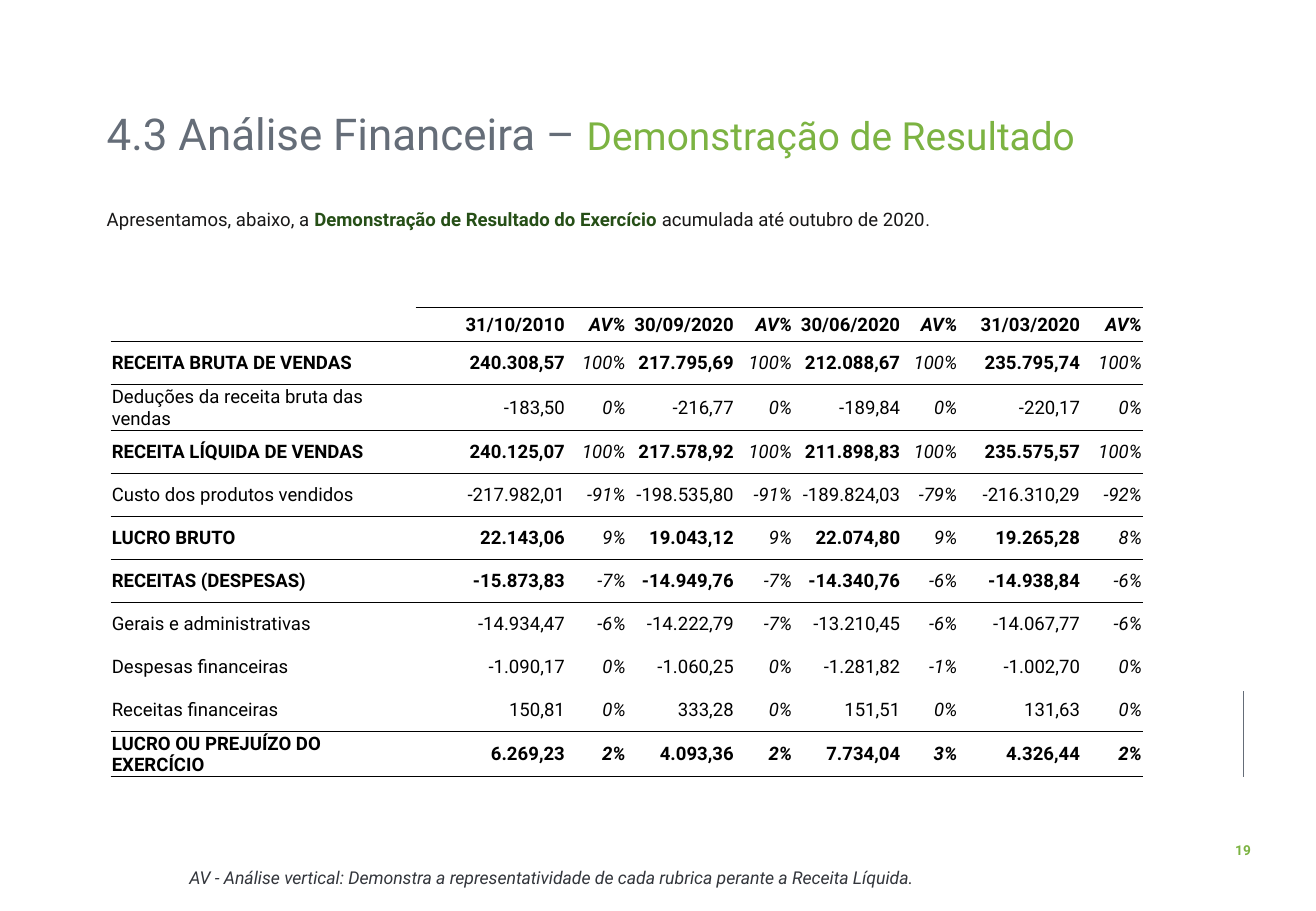
from lxml.etree import SubElement as Sub
from pptx import Presentation
from pptx.dml.color import RGBColor
from pptx.enum.shapes import MSO_CONNECTOR as Link
from pptx.enum.text import MSO_ANCHOR as Anchor, PP_ALIGN as Align
from pptx.oxml.ns import qn
from pptx.util import Inches, Pt

FONT = "Roboto"
GREEN, GRAY, BLACK = "7CB342", "656D78", "000000"
PLAIN = "{2D5ABB26-0587-4C30-8999-92F81FD0307C}"  # table style without grid
COLS = [2.51, 1.24, 0.5, 0.89, 0.48, 0.89, 0.47, 1.01, 0.51]

ROWS = [
    ("", "31/10/2010 AV% 30/09/2020 AV% 30/06/2020 AV% 31/03/2020 AV%"),
    ("RECEITA BRUTA DE VENDAS", "240.308,57 100% 217.795,69 100% 212.088,67 100% 235.795,74 100%"),
    ("Deduções da receita bruta das vendas", "-183,50 0% -216,77 0% -189,84 0% -220,17 0%"),
    ("RECEITA LÍQUIDA DE VENDAS", "240.125,07 100% 217.578,92 100% 211.898,83 100% 235.575,57 100%"),
    ("Custo dos produtos vendidos", "-217.982,01 -91% -198.535,80 -91% -189.824,03 -79% -216.310,29 -92%"),
    ("LUCRO BRUTO", "22.143,06 9% 19.043,12 9% 22.074,80 9% 19.265,28 8%"),
    ("RECEITAS (DESPESAS)", "-15.873,83 -7% -14.949,76 -7% -14.340,76 -6% -14.938,84 -6%"),
    ("Gerais e administrativas", "-14.934,47 -6% -14.222,79 -7% -13.210,45 -6% -14.067,77 -6%"),
    ("Despesas financeiras", "-1.090,17 0% -1.060,25 0% -1.281,82 -1% -1.002,70 0%"),
    ("Receitas financeiras", "150,81 0% 333,28 0% 151,51 0% 131,63 0%"),
    ("LUCRO OU PREJUÍZO DO EXERCÍCIO", "6.269,23 2% 4.093,36 2% 7.734,04 3% 4.326,44 2%"),
]
LAST = len(ROWS) - 1
OPEN = {7, 8}  # rows with no rule beneath
HEAD_H, TABLE_H = 0.28, 3.82
ROW_H = (TABLE_H - HEAD_H) / LAST


def rgb(color):
    return RGBColor.from_string(color)


def add_run(para, text, size, color, bold=False, italic=False):
    run = para.add_run()
    run.text = text
    font = run.font
    font.name, font.size = FONT, Pt(size)
    font.bold, font.italic = bold, italic
    font.color.rgb = rgb(color)


def add_text(slide, box, runs, align=Align.LEFT, space=1.0, anchor=Anchor.TOP, wrap=True):
    """Place one paragraph of runs in a box and return the paragraph."""
    frame = slide.shapes.add_textbox(*map(Inches, box)).text_frame
    frame.word_wrap = wrap
    frame.vertical_anchor = anchor
    para = frame.paragraphs[0]
    para.alignment, para.line_spacing = align, space
    for run in runs:
        add_run(para, *run)
    return para


def add_title(slide, box):
    add_text(slide, box, [("4.3 Análise Financeira – ", 26, GRAY),
                          ("Demonstração de Resultado", 23, GREEN)],
             space=0.9, anchor=Anchor.MIDDLE)


def add_intro(slide, box):
    ink = "181717"
    add_text(slide, box, [
        ("Apresentamos, abaixo, a ", 11, ink),
        ("Demonstração de Resultado do Exercício ", 11, "264F17", True),
        ("acumulada até outubro de 2020", 11, ink),
        (".", 10.5, ink)], Align.JUSTIFY, 1.5)


def add_note(slide, box):
    text = ("AV - Análise vertical: Demonstra a representatividade de cada rubrica "
            "perante a Receita Líquida.")
    para = add_text(slide, box, [(text, 10.5, "33363C", False, True)], Align.JUSTIFY, 1.14)
    para._p.get_or_add_pPr().set("indent", str(Inches(0.31)))


def add_folio(slide, box):
    """Draw the page number and the upright rule above it."""
    left, top, width, height = box
    add_text(slide, box, [("19", 8.1, GREEN, True)], Align.CENTER, wrap=False)
    mid = left + width / 2
    rule = slide.shapes.add_connector(
        Link.STRAIGHT, *map(Inches, (mid, top - 1.19, mid, top - 0.48)))
    rule.line.color.rgb, rule.line.width = rgb(GRAY), Pt(0.5)
    Sub(rule.element.spPr, qn("a:effectLst"))


def add_edge(cell, tag, ruled):
    line = Sub(cell._tc.get_or_add_tcPr(), qn(tag), w=str(Pt(0.5)))
    if ruled:
        Sub(Sub(line, qn("a:solidFill")), qn("a:srgbClr"), val=BLACK)
    else:
        Sub(line, qn("a:noFill"))


def set_frame(cell, row, col):
    """Set margins, rules and fill; the empty corner has no top rule."""
    cell.margin_left = cell.margin_right = cell.margin_top = Inches(0.01)
    cell.margin_bottom = 0
    cell.vertical_anchor = Anchor.MIDDLE
    add_edge(cell, "a:lnT", row - 1 not in OPEN if row else col > 0)
    add_edge(cell, "a:lnB", row not in OPEN)
    cell.fill.background()


def set_text(cell, row, col, text, total):
    """Write a value: totals are bold, shares (even columns) are italic."""
    para = cell.text_frame.paragraphs[0]
    para.alignment = Align.RIGHT if col else Align.LEFT
    share = col > 0 and col % 2 == 0
    bold = row in (0, LAST) or (total and not share)
    if text:
        add_run(para, text, 11, BLACK, bold, share)
    else:
        Sub(para._p, qn("a:endParaRPr"), sz="1100")


def add_results(slide, left, top):
    shape = slide.shapes.add_table(
        len(ROWS), len(COLS), *map(Inches, (left, top, sum(COLS), TABLE_H)))
    table = shape.table
    table.first_row = table.horz_banding = False
    shape.element.find(".//" + qn("a:tableStyleId")).text = PLAIN
    for col, width in zip(table.columns, COLS):
        col.width = Inches(width)
    for row, (label, values) in enumerate(ROWS):
        table.rows[row].height = Inches(ROW_H if row else HEAD_H)
        for col, text in enumerate([label, *values.split()]):
            cell = table.cell(row, col)
            set_frame(cell, row, col)
            set_text(cell, row, col, text, label.isupper())


def main():
    deck = Presentation()
    deck.slide_width, deck.slide_height = Inches(10.83), Inches(7.5)
    slide = deck.slides.add_slide(deck.slide_layouts[6])
    add_folio(slide, (10.06, 6.88, 0.34, 0.24))
    add_title(slide, (0.78, 0.86, 8.47, 0.53))
    add_intro(slide, (0.78, 1.57, 8.88, 0.35))
    add_note(slide, (1.15, 7.06, 6.49, 0.29))
    add_results(slide, 0.91, 2.53)
    deck.save("out.pptx")


if __name__ == "__main__":
    main()
